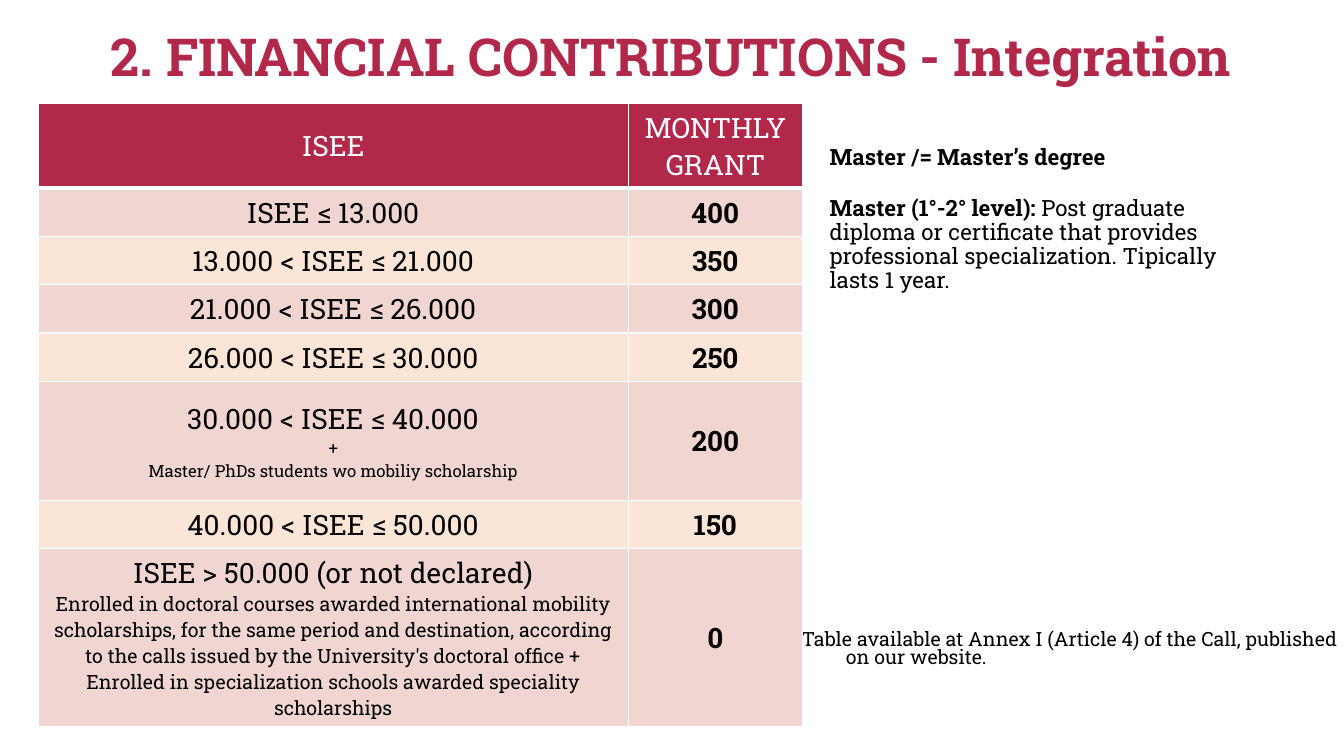
from lxml import etree
from pptx import Presentation
from pptx.dml.color import RGBColor
from pptx.enum.text import MSO_ANCHOR, MSO_AUTO_SIZE, PP_ALIGN
from pptx.oxml.ns import qn
from pptx.util import Inches, Pt

FONT = "Roboto Slab"
CRIMSON = RGBColor(0xB2, 0x28, 0x4B)
ROSE = RGBColor(0xF0, 0xD5, 0xD1)
PEACH = RGBColor(0xFB, 0xE5, 0xD6)
BLACK = RGBColor(0, 0, 0)
WHITE = RGBColor(255, 255, 255)


def style(target, size, color=BLACK, bold=False):
    font = target.font
    font.name, font.size, font.bold = FONT, Pt(size), bold
    font.color.rgb = color


def place(shape, left, top, width, height):
    shape.left, shape.top = Inches(left), Inches(top)
    shape.width, shape.height = Inches(width), Inches(height)


prs = Presentation()
prs.slide_width, prs.slide_height = Inches(13.33), Inches(7.5)
slide = prs.slides.add_slide(prs.slide_layouts[1])

# Title
title = slide.shapes.title
place(title, 0.67, 0.19, 11.99, 0.84)
title.text_frame.text = "2. FINANCIAL CONTRIBUTIONS - Integration"
title.text_frame.auto_size = MSO_AUTO_SIZE.NONE
title.text_frame.vertical_anchor = MSO_ANCHOR.MIDDLE
heading = title.text_frame.paragraphs[0]
heading.alignment = PP_ALIGN.CENTER
heading.line_spacing = 0.8
style(heading, 37.4, CRIMSON, True)

# Grant table: bracket lines with their sizes, monthly grant, row height
brackets = [
    ([("ISEE", 20)], "MONTHLY GRANT", 0.83),
    ([("ISEE ≤ 13.000", 20)], "400", 0.48),
    ([("13.000 < ISEE ≤ 21.000", 20)], "350", 0.48),
    ([("21.000 < ISEE ≤ 26.000", 20)], "300", 0.48),
    ([("26.000 < ISEE ≤ 30.000", 20)], "250", 0.48),
    ([("30.000 < ISEE ≤ 40.000", 20), ("+", 12),
      ("Master/ PhDs students wo mobiliy scholarship", 12)], "200", 1.18),
    ([("40.000 < ISEE ≤ 50.000", 20)], "150", 0.48),
    ([("ISEE > 50.000 (or not declared)", 20),
      ("Enrolled in doctoral courses awarded international mobility "
       "scholarships, for the same period and destination, according to the "
       "calls issued by the University's doctoral office + Enrolled in "
       "specialization schools awarded speciality scholarships", 14)], "0", 1.76),
]
grants = slide.shapes.add_table(
    len(brackets), 2, Inches(0.38), Inches(1.03), Inches(7.58),
    Inches(sum(height for _, _, height in brackets))).table
grants.columns[0].width, grants.columns[1].width = Inches(5.85), Inches(1.73)

for row, (bracket, grant, height) in enumerate(brackets):
    grants.rows[row].height = Inches(height)
    header = row == 0
    for column, lines in enumerate([bracket, [(grant, 20)]]):
        cell = grants.cell(row, column)
        cell.vertical_anchor = MSO_ANCHOR.MIDDLE
        cell.text = "\n".join(text for text, _ in lines)
        for paragraph, (_, size) in zip(cell.text_frame.paragraphs, lines):
            paragraph.alignment = PP_ALIGN.CENTER
            style(paragraph, size, WHITE if header else BLACK,
                  column == 1 and not header)
        # White borders, thicker between the header and the first bracket
        for side in ("L", "R", "T", "B"):
            thick = (row, side) in ((0, "B"), (1, "T"))
            border = etree.SubElement(cell._tc.get_or_add_tcPr(), qn(f"a:ln{side}"),
                                      w=str(Pt(3 if thick else 1)))
            paint = etree.SubElement(border, qn("a:solidFill"))
            etree.SubElement(paint, qn("a:srgbClr"), val=str(WHITE))
        cell.fill.solid()
        cell.fill.fore_color.rgb = CRIMSON if header else ROSE if row % 2 else PEACH

# Source of the table
source = slide.placeholders[1]
place(source, 7.79, 6.21, 5.73, 0.26)
source.text_frame.text = ("Table available at Annex I (Article 4) of the Call, "
                          "published on our website.")
source.text_frame.auto_size = MSO_AUTO_SIZE.NONE
citation = source.text_frame.paragraphs[0]
citation_format = citation._p.get_or_add_pPr()
citation_format.set("marL", str(Inches(0.5)))
citation_format.set("indent", str(Inches(-0.44)))
etree.SubElement(citation_format, qn("a:buNone"))
citation.line_spacing = 0.8
citation.space_before = Pt(0)
style(citation, 14)

# Definition of a Master
definition = slide.shapes.add_textbox(
    Inches(8.13), Inches(1.4), Inches(4.2), Inches(1.72)).text_frame
definition.word_wrap = True
remark = definition.paragraphs[0]
remark.text = "Master /= Master’s degree"
style(remark, 16, bold=True)
meaning = definition.add_paragraph()
meaning.space_before = Pt(19)
for text, bold in [("Master (1°-2° level): ", True),
                   ("Post graduate diploma or certificate that provides "
                    "professional specialization. Tipically lasts 1 year.", False)]:
    run = meaning.add_run()
    run.text = text
    style(run, 16, bold=bold)
for paragraph in definition.paragraphs:
    paragraph.line_spacing = 0.9

prs.save("out.pptx")
